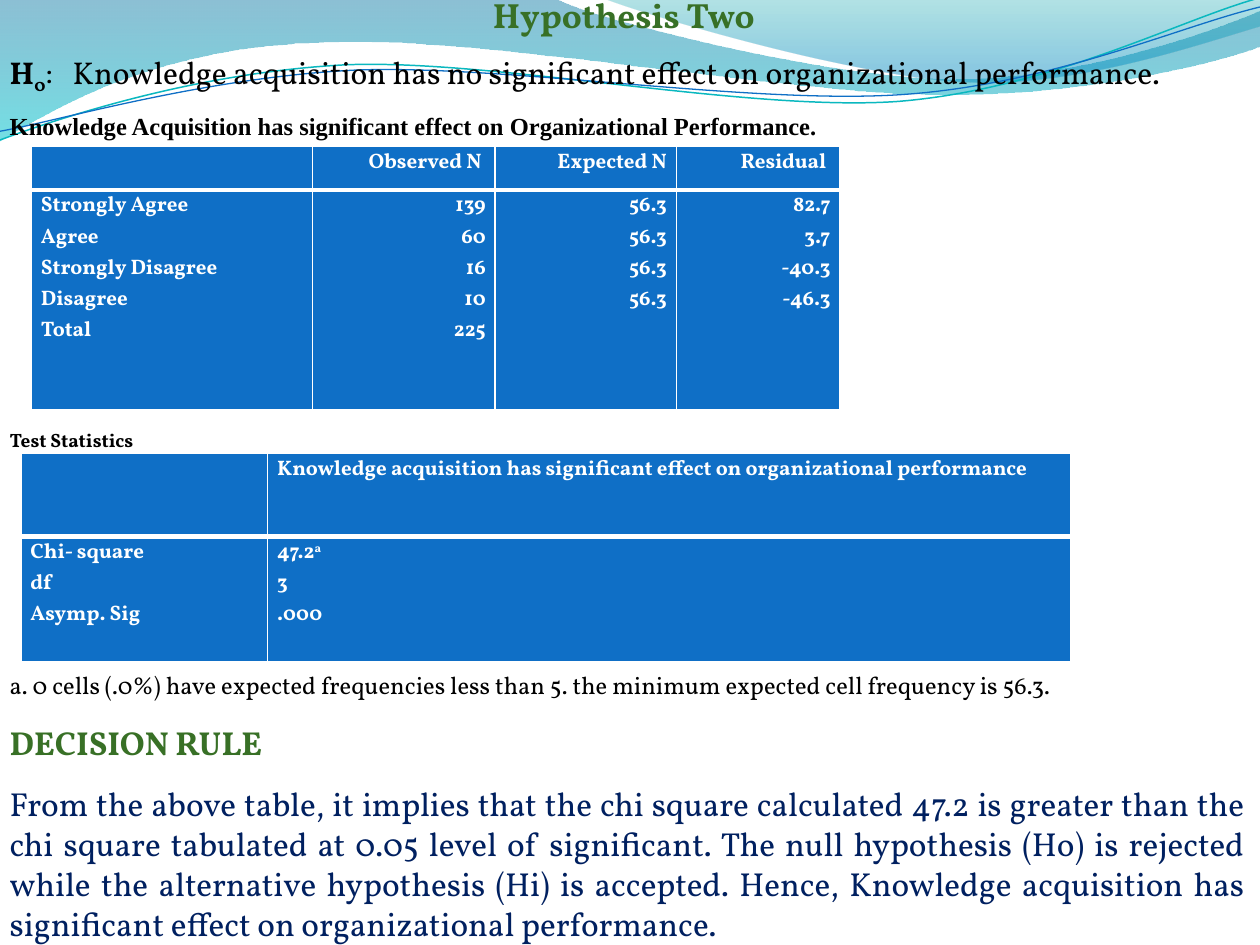
from dataclasses import dataclass
from lxml import etree
from pptx import Presentation
from pptx.dml.color import RGBColor
from pptx.enum.text import MSO_AUTO_SIZE, PP_ALIGN
from pptx.oxml import parse_xml
from pptx.oxml.ns import nsdecls, qn
from pptx.util import Pt

LEFT, CENTER, RIGHT, JUSTIFY = PP_ALIGN.LEFT, PP_ALIGN.CENTER, PP_ALIGN.RIGHT, PP_ALIGN.JUSTIFY
GROW = MSO_AUTO_SIZE.SHAPE_TO_FIT_TEXT


@dataclass(frozen=True)
class Theme:
    font: str = "Vollkorn"
    caption_font: str = "Times New Roman"
    ink: str = "000000"
    paper: str = "FFFFFF"
    heading: str = "387026"
    decision: str = "002060"
    table: str = "0F6FC6"
    teal_line: str = "0AB8BF"
    title_size: int = 20
    decision_size: int = 19
    hypothesis_size: int = 18
    note_size: int = 14
    table_size: int = 12
    label_size: int = 11
    table_spacing: float = 1.07


def add_run(paragraph, text, *, font, size, color, bold=False, baseline=0):
    run = paragraph.add_run()
    run.text = text
    run.font.name = font
    run.font.size = Pt(size)
    run.font.bold = bold
    run.font.color.rgb = RGBColor.from_string(color)
    if baseline:
        run.font._element.set("baseline", str(baseline * 1000))


class SlideBuilder:
    def __init__(self, slide, theme):
        self.slide = slide
        self.theme = theme

    def outline(self, start, segments, closed):
        anchors = [start] + [segment[-2:] for segment in segments]
        left, top = (min(values) for values in zip(*anchors))
        builder = self.slide.shapes.build_freeform(Pt(start[0]), Pt(start[1]))
        builder.add_line_segments([(Pt(x), Pt(y)) for x, y in anchors[1:]], close=closed)
        shape = builder.convert_to_shape()
        shape.shadow.inherit = False
        lines = list(shape._element.iter(qn("a:lnTo")))
        for line, segment in zip(lines, segments):
            if len(segment) == 6:
                bezier = etree.Element(qn("a:cubicBezTo"))
                for x, y in zip(segment[::2], segment[1::2]):
                    etree.SubElement(bezier, qn("a:pt"), x=str(Pt(x - left)), y=str(Pt(y - top)))
                line.getparent().replace(line, bezier)
        return shape

    def wave(self, start, segments, stops):
        shape = self.outline(start, segments, True)
        shape.line.fill.background()
        shape.fill.background()
        stop_xml = "".join(
            f'<a:gs pos="{position * 1000}"><a:srgbClr val="{color}">'
            f'<a:alpha val="{opacity * 1000}"/></a:srgbClr></a:gs>'
            for position, color, opacity in stops)
        gradient = parse_xml(f'<a:gradFill {nsdecls("a")}><a:gsLst>{stop_xml}</a:gsLst>'
                             '<a:lin ang="5400000" scaled="0"/></a:gradFill>')
        properties = shape._element.spPr
        properties.replace(properties.find(qn("a:noFill")), gradient)

    def curve(self, start, segments, color, width):
        shape = self.outline(start, segments, False)
        shape.fill.background()
        shape.line.color.rgb = RGBColor.from_string(color)
        shape.line.width = Pt(width)

    def text_flow(self, left, top, width, height):
        frame = self.slide.shapes.add_textbox(Pt(left), Pt(top), Pt(width), Pt(height)).text_frame
        frame.word_wrap = True
        frame.auto_size = GROW
        return frame

    def paragraph(self, frame, runs, *, size, align=LEFT, before=0, after=0, hanging=0, **style):
        first = frame.paragraphs[0]
        paragraph = frame.add_paragraph() if first.runs else first
        paragraph.alignment = align
        paragraph.space_before, paragraph.space_after = Pt(before), Pt(after)
        if hanging:
            properties = paragraph._p.get_or_add_pPr()
            properties.set("marL", str(Pt(hanging)))
            properties.set("indent", str(-Pt(hanging)))
        defaults = {"font": self.theme.font, "color": self.theme.ink, "size": size, **style}
        for text, changes in runs:
            add_run(paragraph, text, **{**defaults, **changes})

    def border(self, cell, side, width):
        line = etree.SubElement(cell._tc.get_or_add_tcPr(), qn(f"a:ln{side}"), w=str(Pt(width)))
        fill = etree.SubElement(line, qn("a:solidFill"))
        etree.SubElement(fill, qn("a:srgbClr"), val=self.theme.paper)

    def table(self, left, top, widths, heights, rows, value_align):
        table = self.slide.shapes.add_table(len(rows), len(widths), Pt(left), Pt(top),
                                            Pt(sum(widths)), Pt(sum(heights))).table
        for column, width in zip(table.columns, widths):
            column.width = Pt(width)
        for row_index, (height, row) in enumerate(zip(heights, rows)):
            table.rows[row_index].height = Pt(height)
            for column_index, lines in enumerate(row):
                cell = table.cell(row_index, column_index)
                for side, width in zip("LRTB", (1, 1, 3, 1) if row_index else (1, 1, 1, 3)):
                    self.border(cell, side, width)
                cell.fill.solid()
                cell.fill.fore_color.rgb = RGBColor.from_string(self.theme.table)
                cell.margin_left = cell.margin_right = Pt(5.4)
                cell.margin_top = cell.margin_bottom = 0
                self.cell_lines(cell, lines, value_align if column_index else LEFT)

    def cell_lines(self, cell, lines, align):
        theme = self.theme
        for index, line in enumerate(lines):
            paragraph = cell.text_frame.add_paragraph() if index else cell.text_frame.paragraphs[0]
            paragraph.alignment = align
            paragraph.line_spacing = theme.table_spacing
            text, _, superscript = line.partition("^")
            style = dict(font=theme.font, size=theme.table_size, color=theme.paper, bold=True)
            add_run(paragraph, text, **style)
            if superscript:
                add_run(paragraph, superscript, baseline=30, **style)


def main():
    theme = Theme()
    deck = Presentation()
    deck.slide_width, deck.slide_height = Pt(720), Pt(540)
    page = SlideBuilder(deck.slides.add_slide(deck.slide_layouts[6]), theme)

    page.wave((0, 0), [(317, -1), (343, 12, 478, 45, 546, 45), (614, 45, 690, 19, 720, 6),
                       (721, 26), (708, 32, 626, 55, 537, 54), (448, 54, 275, 20, 185, 24),
                       (93, 26, 33, 60, -1, 81)],
              [(0, "0074A1", 45), (100, "00C6CF", 55)])
    page.wave((345, -1), [(367, 8, 491, 45, 554, 47), (616, 50, 692, 23, 720, 15), (720, 0)],
              [(0, "00A1A9", 30), (80, "008BBF", 45)])
    page.curve((0, 80), [(35, 67, 114, 41, 199, 37), (284, 34, 427, 64, 513, 58),
                         (600, 51, 675, 11, 719, -1)], theme.teal_line, 0.85)
    page.curve((0, 75), [(34, 69, 118, 44, 204, 40), (290, 37, 430, 60, 516, 54),
                         (602, 48, 674, 15, 720, 4)], theme.table, 0.75)

    flow = page.text_flow(-1.5, -7, 720, 551.5)
    page.paragraph(flow, [("Hypothesis Two ", {})], size=theme.title_size, align=CENTER,
                   before=6, after=6, hanging=40, color=theme.heading, bold=True)
    page.paragraph(flow, [("H", {"bold": True}), ("0", {"bold": True, "baseline": -25}),
                          (": \tKnowledge acquisition has no significant effect on "
                           "organizational performance.", {})],
                   size=theme.hypothesis_size, align=JUSTIFY, before=3.5, after=6, hanging=36)
    page.paragraph(flow, [("Knowledge Acquisition has significant effect on "
                           "Organizational Performance.", {})],
                   size=theme.note_size, before=3, font=theme.caption_font, bold=True)
    page.paragraph(flow, [("Test Statistics", {})], size=theme.label_size, before=164.5, bold=True)
    page.paragraph(flow, [("a. 0 cells (.0%) have expected frequencies less than 5. the minimum "
                           "expected cell frequency is 56.3.", {})],
                   size=theme.note_size, before=125)
    page.paragraph(flow, [("DECISION RULE ", {})], size=theme.decision_size, align=JUSTIFY,
                   before=13, color=theme.heading, bold=True)
    page.paragraph(flow, [("From the above table, it implies that the chi square calculated 47.2 "
                           "is greater than the chi square tabulated at 0.05 level of significant. "
                           "The null hypothesis (Ho) is rejected while the alternative hypothesis "
                           "(Hi) is accepted. Hence, Knowledge acquisition has significant effect "
                           "on organizational performance.", {})],
                   size=theme.decision_size, align=JUSTIFY, before=12, color=theme.decision)

    page.table(18, 83.5, (160.5, 104.5, 103.5, 93.5), (25, 125.5), [
        ([], ["Observed N "], ["Expected N"], ["Residual "]),
        (["Strongly Agree", "Agree", "Strongly Disagree", "Disagree", "Total"],
         ["139", "60", "16", "10", "225"], ["56.3"] * 4, ["82.7", "3.7", "-40.3", "-46.3"]),
    ], RIGHT)
    page.table(12, 259, (141, 459), (47.5, 71.5), [
        ([], ["Knowledge acquisition has significant effect on organizational performance"]),
        (["Chi- square", "df", "Asymp. Sig"], ["47.2^a", "3", ".000"]),
    ], LEFT)
    deck.save("out.pptx")


if __name__ == "__main__":
    main()
